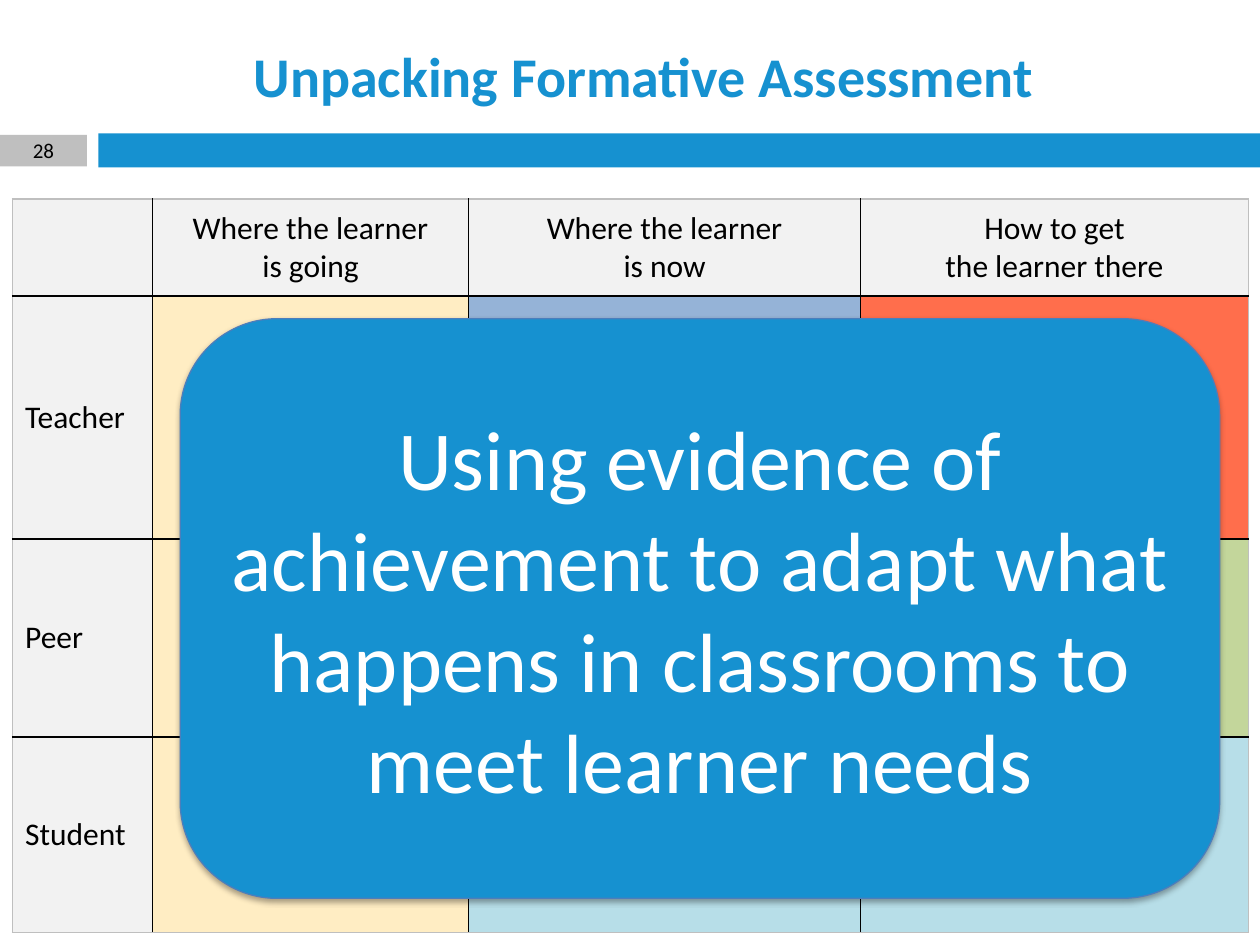
from dataclasses import dataclass

from lxml import etree
from pptx import Presentation
from pptx import util as u
from pptx.dml.color import RGBColor
from pptx.enum import shapes, text
from pptx.oxml import ns


@dataclass(frozen=True)
class Theme:
    """Colours, font and type sizes of the slide."""
    font: str = "Calibri"
    blue: str = "1691D0"
    outline: str = "4B7EBC"
    grey: str = "BFBFBF"
    label: str = "F2F2F2"
    black: str = "000000"
    white: str = "FFFFFF"
    going: str = "FFEDC3"
    now: str = "95B3D7"
    action: str = "FF6E4C"
    peer: str = "C3D69B"
    student: str = "B7DEE8"
    title: int = 32
    callout: int = 48
    body: int = 18
    number: int = 12


T = Theme()
CENTER, LEFT = text.PP_ALIGN.CENTER, text.PP_ALIGN.LEFT
HEADINGS = ["", "Where the learner\nis going", "Where the learner\nis now",
            "How to get\nthe learner there"]
ROWS = [("Teacher", T.going, T.now, T.action),
        ("Peer", T.going, T.peer, T.peer),
        ("Student", T.going, T.student, T.student)]
COL_WIDTHS = [1.11, 2.51, 3.11, 3.08]
ROW_HEIGHTS = [0.77, 1.93, 1.57, 1.55]


def write(tf, words, size=T.body, color=T.black, bold=False, align=CENTER):
    """Fill a text frame with one formatted paragraph, breaking at newlines."""
    tf.word_wrap = True
    p = tf.paragraphs[0]
    p.alignment = align
    for i, line in enumerate(words.split("\n")):
        if i:
            p.add_line_break()
        r = p.add_run()
        r.text = line
        r.font.name, r.font.size, r.font.bold = T.font, u.Pt(size), bold
        r.font.color.rgb = RGBColor.from_string(color)


def add_block(s, kind, box, fill, line=None):
    """Add a filled shape with an optional outline and no shadow."""
    sp = s.shapes.add_shape(kind, *map(u.Inches, box))
    sp.shadow.inherit = False
    sp.fill.solid()
    sp.fill.fore_color.rgb = RGBColor.from_string(fill)
    if line:
        sp.line.color.rgb = RGBColor.from_string(line)
        sp.line.width = u.Pt(0.75)
    else:
        sp.line.fill.background()
    sp.text_frame.vertical_anchor = text.MSO_ANCHOR.MIDDLE
    return sp


def add_shadow(sp, color, alpha, blur, dist):
    """Give a shape a soft shadow falling straight down."""
    effects = sp._element.spPr.find(ns.qn("a:effectLst"))
    shadow = etree.SubElement(effects, ns.qn("a:outerShdw"), blurRad=str(u.Pt(blur)),
                              dist=str(u.Pt(dist)), dir="5400000", rotWithShape="0")
    clr = etree.SubElement(shadow, ns.qn("a:srgbClr"), val=color)
    etree.SubElement(clr, ns.qn("a:alpha"), val=str(alpha * 1000))


def set_borders(cell, colors):
    """Draw the left, right, top and bottom borders of a cell."""
    tc_pr = cell._tc.get_or_add_tcPr()
    for i, (side, color) in enumerate(zip("LRTB", colors)):
        ln = etree.Element(ns.qn(f"a:ln{side}"), w=str(u.Pt(1)))
        fill = etree.SubElement(ln, ns.qn("a:solidFill"))
        etree.SubElement(fill, ns.qn("a:srgbClr"), val=color)
        tc_pr.insert(i, ln)


def add_title(s, box):
    """Add the slide title."""
    tb = s.shapes.add_textbox(*map(u.Inches, box))
    tb.text_frame.vertical_anchor = text.MSO_ANCHOR.MIDDLE
    write(tb.text_frame, "Unpacking Formative Assessment", T.title, T.blue, bold=True)


def add_band(s, box):
    """Add the page number tab and the blue rule beside it."""
    x, y, w, h = box
    rect = shapes.MSO_SHAPE.RECTANGLE
    add_block(s, rect, (x + 0.78, y, w - 0.78, h), T.blue)
    tab = add_block(s, rect, (x, y + 0.01, 0.69, 0.25), T.grey)
    tf = tab.text_frame
    tf.margin_top = tf.margin_bottom = 0
    write(tf, "28", T.number)


def add_strategy_table(s, box):
    """Add the grid of roles against stages of learning."""
    rows, cols = len(ROW_HEIGHTS), len(COL_WIDTHS)
    table = s.shapes.add_table(rows, cols, *map(u.Inches, box)).table
    table.first_row = table.horz_banding = False
    for col, width in zip(table.columns, COL_WIDTHS):
        col.width = u.Inches(width)
    for row, height in zip(table.rows, ROW_HEIGHTS):
        row.height = u.Inches(height)
    fills = [[T.label] * cols] + [[T.label, *colors] for _, *colors in ROWS]
    words = [HEADINGS] + [[role] + [""] * (cols - 1) for role, *_ in ROWS]
    for i in range(rows):
        for j in range(cols):
            cell = table.cell(i, j)
            edges = (j == 0, j == cols - 1, i == 0, i == rows - 1)
            set_borders(cell, [T.grey if edge else T.black for edge in edges])
            cell.fill.solid()
            cell.fill.fore_color.rgb = RGBColor.from_string(fills[i][j])
            cell.vertical_anchor = text.MSO_ANCHOR.MIDDLE
            if words[i][j]:
                write(cell.text_frame, words[i][j], align=LEFT if i else CENTER)


def add_callout(s, box):
    """Add the rounded summary panel over the table."""
    sp = add_block(s, shapes.MSO_SHAPE.ROUNDED_RECTANGLE, box, T.blue, T.outline)
    add_shadow(sp, T.black, alpha=35, blur=3.1, dist=1.8)
    write(sp.text_frame, "Using evidence of achievement to adapt what happens "
          "in classrooms to meet learner needs", T.callout, T.white)


def main():
    """Build and save the slide."""
    prs = Presentation()
    prs.slide_width, prs.slide_height = u.Inches(10), u.Inches(7.5)
    s = prs.slides.add_slide(prs.slide_layouts[6])
    add_band(s, (0, 1.06, 10, 0.27))
    add_strategy_table(s, (0.1, 1.58, 9.8, 5.82))
    add_title(s, (0.78, 0.26, 8.66, 0.68))
    add_callout(s, (1.43, 2.53, 8.25, 4.6))
    prs.save("out.pptx")


if __name__ == "__main__":
    main()
